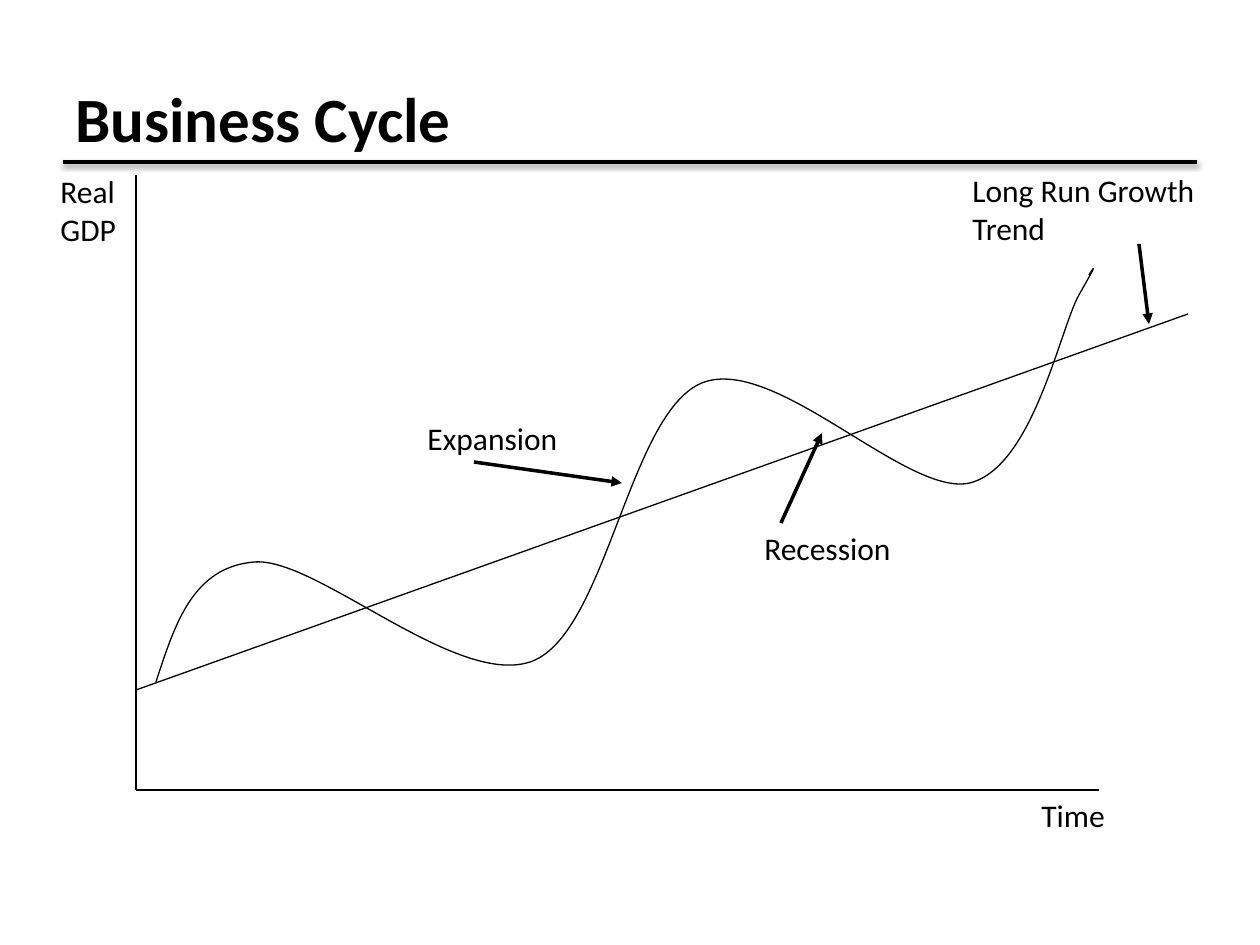
"""Builds the Business Cycle slide."""
from dataclasses import dataclass

from lxml import etree
from pptx import Presentation, util as u
from pptx.dml.color import RGBColor
from pptx.enum import shapes, text
from pptx.oxml import parse_xml
from pptx.oxml.ns import nsdecls, qn

PX = u.Inches(1) / 126


@dataclass
class Theme:
    face: str = "Calibri"
    ink: str = "000000"
    head: int = 36
    body: int = 18
    thin: float = 0.75
    bold: float = 2


def emu(*vals):
    return [round(v * PX) for v in vals]


class Page:
    def __init__(self, slide, theme):
        self.slide = slide
        self.theme = theme
        self.ink = RGBColor.from_string(theme.ink)

    def stroke(self, line, width):
        line.color.rgb = self.ink
        line.width = u.Pt(width)

    def words(self, copy, box, form, font):
        frame = self.slide.shapes.add_textbox(*emu(*box)).text_frame
        run = frame.paragraphs[0].add_run()
        run.text = copy
        run.font.color.rgb = self.ink
        for item, vals in (
                (frame, {"word_wrap": True, **form}),
                (run.font, {"name": self.theme.face, **font})):
            for key, val in vals.items():
                setattr(item, key, val)

    def label(self, copy, box):
        self.words(copy, box, {"auto_size": text.MSO_AUTO_SIZE.SHAPE_TO_FIT_TEXT},
                   {"size": u.Pt(self.theme.body)})

    def title(self, copy, box):
        self.words(copy, box, {"vertical_anchor": text.MSO_ANCHOR.MIDDLE},
                   {"size": u.Pt(self.theme.head), "bold": True})

    def line(self, start, end, width=None):
        link = self.slide.shapes.add_connector(
            shapes.MSO_CONNECTOR.STRAIGHT, *emu(*start, *end))
        self.stroke(link.line, width or self.theme.thin)
        props = link._element.spPr
        etree.SubElement(props, qn("a:effectLst"))
        return props

    def arrow(self, start, end):
        props = self.line(start, end, self.theme.bold)
        etree.SubElement(props.find(qn("a:ln")), qn("a:tailEnd"), type="triangle")

    def rule(self, start, end):
        props = self.line(start, end, self.theme.bold)
        props.find(qn("a:effectLst")).append(parse_xml(
            f'<a:outerShdw {nsdecls("a")} blurRad="{u.Pt(3.1)}" dist="{u.Pt(1.6)}" '
            f'dir="5400000" rotWithShape="0"><a:srgbClr val="{self.theme.ink}">'
            '<a:alpha val="38000"/></a:srgbClr></a:outerShdw>'))

    def curve(self, start, knots):
        pen = self.slide.shapes.build_freeform(*start, scale=PX)
        pen.add_line_segments(knots, close=False)
        wave = pen.convert_to_shape()
        wave.shadow.inherit = False
        wave.fill.background()
        self.stroke(wave.line, self.theme.thin)
        route = next(wave._element.iter(qn("a:path")))
        legs = route.findall(qn("a:lnTo"))
        for i in range(0, len(legs), 3):
            bend = etree.SubElement(route, qn("a:cubicBezTo"))
            for leg in legs[i:i + 3]:
                bend.append(leg[0])
                route.remove(leg)


def main():
    deck = Presentation()
    deck.slide_width, deck.slide_height = u.Inches(10), u.Inches(7.5)
    page = Page(deck.slides.add_slide(deck.slide_layouts[6]), Theme())

    page.rule((63, 162), (1197, 162))
    page.title("Business Cycle", (63, 38, 1134, 158))

    base = (136, 790)
    page.line((136, 175), base)
    page.line(base, (1099, 790))
    page.line((136, 690), (1188, 314))
    page.curve((156, 682), [
        (175, 624), (193, 566), (256, 562),
        (319, 559), (459, 690), (533, 661),
        (607, 631), (629, 413), (702, 383),
        (775, 354), (907, 498), (970, 483),
        (1033, 467), (1060, 329), (1079, 295),
        (1099, 260), (1094, 267), (1089, 275)])

    for copy, box in (
            ("Real GDP", (48, 166, 110, 88)),
            ("Time", (1029, 790, 110, 50)),
            ("Long Run Growth Trend", (960, 165, 258, 88)),
            ("Recession", (752, 523, 189, 50)),
            ("Expansion", (415, 413, 198, 50))):
        page.label(copy, box)

    for start, end in (
            ((1139, 244), (1149, 324)),
            ((781, 523), (822, 433)),
            ((474, 462), (622, 483))):
        page.arrow(start, end)

    deck.save("out.pptx")


if __name__ == "__main__":
    main()
